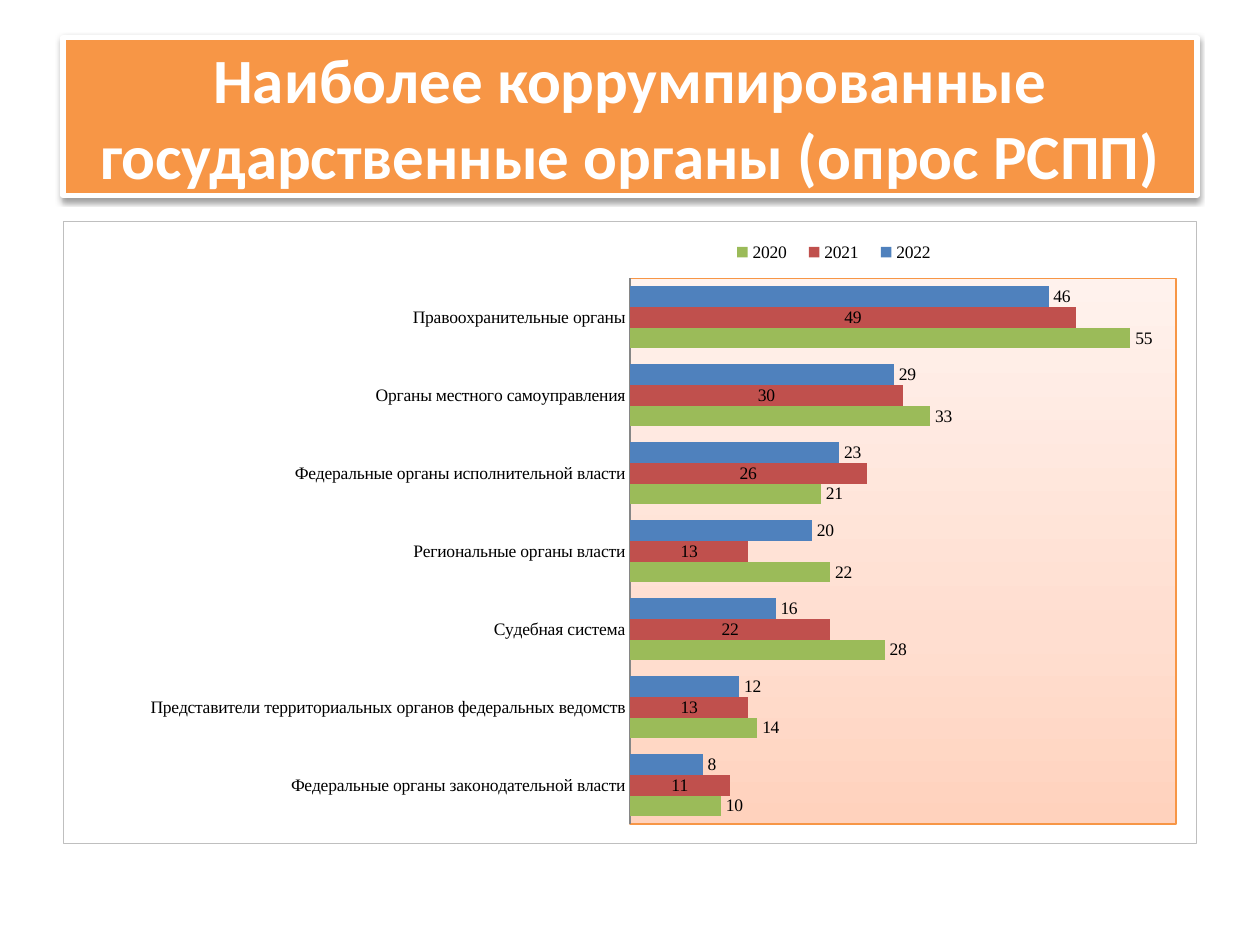
from pptx import Presentation
from pptx.chart.data import CategoryChartData
from pptx.dml.color import RGBColor
from pptx.enum import chart as ch, text
from pptx.oxml import parse_xml
from pptx.oxml.ns import nsdecls
from pptx.util import Inches, Pt

HUES = {"title": "F79646", "white": "FFFFFF", "ink": "000000",
        "frame": "BFBFBF", "axis": "868686", "low": "FFD2BD",
        "mid": "FFDED0", "high": "FFF2ED"}
BODIES = ["Правоохранительные органы", "Органы местного самоуправления",
          "Федеральные органы исполнительной власти",
          "Региональные органы власти", "Судебная система",
          "Представители территориальных органов федеральных ведомств",
          "Федеральные органы законодательной власти"]
OUT, MID = ch.XL_LABEL_POSITION.OUTSIDE_END, ch.XL_LABEL_POSITION.CENTER
YEARS = [("2022", [46, 29, 23, 20, 16, 12, 8], "4F81BD", OUT),
         ("2021", [49, 30, 26, 13, 22, 13, 11], "C0504D", MID),
         ("2020", [55, 33, 21, 22, 28, 14, 10], "9BBB59", OUT)]


def hue(name):
    """Return the named colour."""
    return RGBColor.from_string(HUES[name])


def node(tag, body):
    """Build an XML element in the chart and drawing namespaces."""
    return parse_xml(f"<{tag} {nsdecls('a', 'c')}>{body}</{tag}>")


def line(name, width):
    """Return the XML of a solid line."""
    return (f'<a:ln w="{Pt(width)}"><a:solidFill><a:srgbClr val="{HUES[name]}"/>'
            "</a:solidFill></a:ln>")


def layout(inner="", **sides):
    """Build a manual layout from fractions of the chart."""
    modes = '<c:xMode val="edge"/><c:yMode val="edge"/>'
    sizes = "".join(f'<c:{k} val="{v}"/>' for k, v in sides.items())
    return node("c:layout", f"<c:manualLayout>{inner}{modes}{sizes}</c:manualLayout>")


def add_title(slide, words):
    """Format the title as an orange panel with a white frame and shadow."""
    box = slide.shapes.title
    box.left, box.top = Inches(0.5), Inches(0.3)
    box.width, box.height = Inches(9), Inches(1.25)
    box.fill.solid()
    box.fill.fore_color.rgb = hue("title")
    box.line.color.rgb = hue("white")
    box.line.width = Pt(3)
    box._element.spPr.append(node("a:effectLst", (
        f'<a:outerShdw blurRad="{Pt(3.1)}" dist="{Pt(1.6)}" dir="5400000" '
        f'rotWithShape="0"><a:srgbClr val="{HUES["ink"]}">'
        '<a:alpha val="38000"/></a:srgbClr></a:outerShdw>')))
    frame = box.text_frame
    frame.text = words
    frame.word_wrap = True
    frame.auto_size = text.MSO_AUTO_SIZE.NONE
    frame.vertical_anchor = text.MSO_ANCHOR.MIDDLE
    para = frame.paragraphs[0]
    para.alignment = text.PP_ALIGN.CENTER
    para.font.name, para.font.size, para.font.bold = "Calibri", Pt(36), True
    para.font.color.rgb = hue("white")


def style_bars(plot):
    """Colour and label the bars of each year."""
    plot.gap_width, plot.overlap = 75, 0
    plot.vary_by_categories = False
    for bars, (_, _, shade, spot) in zip(plot.series, YEARS):
        bars.format.fill.solid()
        bars.format.fill.fore_color.rgb = RGBColor.from_string(shade)
        bars.invert_if_negative = False
        tags = bars.data_labels
        tags.show_value, tags.position = True, spot
        tags.number_format, tags.number_format_is_linked = "#,##0", False


def style_axes(chart):
    """Reverse the category axis and hide the value axis."""
    cat, val = chart.category_axis, chart.value_axis
    cat.reverse_order = True
    cat.major_tick_mark = ch.XL_TICK_MARK.NONE
    cat.format.line.color.rgb = hue("axis")
    val.minimum_scale, val.maximum_scale = 0, 60
    val.has_major_gridlines = val.visible = False


def style_areas(chart):
    """Place the plot and legend, and paint their backgrounds."""
    space = chart._chartSpace
    area = space.chart.plotArea
    for old in area.findall("{*}layout"):
        area.remove(old)
    area.insert(0, layout('<c:layoutTarget val="inner"/>',
                          x=0.5, y=0.092, w=0.482, h=0.877))
    stops = "".join(f'<a:gs pos="{spot * 1000}"><a:srgbClr val="{HUES[name]}"/></a:gs>'
                    for spot, name in ((0, "low"), (35, "mid"), (100, "high")))
    area.append(node("c:spPr", f'<a:gradFill><a:gsLst>{stops}</a:gsLst>'
                     '<a:lin ang="16200000" scaled="1"/></a:gradFill>'
                     + line("title", 1)))
    space.chart.addnext(node("c:spPr", line("frame", 0.75)))
    chart.has_legend = True
    chart.legend.position = ch.XL_LEGEND_POSITION.TOP
    chart.legend.include_in_layout = False
    key = chart.legend._element
    for old in key.findall("{*}layout"):
        key.remove(old)
    key.find("{*}legendPos").addnext(layout(x=0.58, y=0.02, w=0.2, h=0.06))


def add_bars(slide):
    """Add the bar chart of state bodies by year."""
    data = CategoryChartData()
    data.categories = BODIES
    for name, vals, _, _ in YEARS:
        data.add_series(name, vals)
    chart = slide.shapes.add_chart(
        ch.XL_CHART_TYPE.BAR_CLUSTERED, Inches(0.5), Inches(1.75),
        Inches(9), Inches(4.95), data).chart
    chart.has_title = False
    chart.font.name, chart.font.size = "Times New Roman", Pt(10)
    chart.font.color.rgb = hue("ink")
    style_bars(chart.plots[0])
    style_axes(chart)
    style_areas(chart)


def main():
    """Build and save the slide."""
    deck = Presentation()
    deck.slide_width, deck.slide_height = Inches(10), Inches(7.5)
    slide = deck.slides.add_slide(deck.slide_layouts[5])
    add_title(slide, "Наиболее коррумпированные государственные органы (опрос РСПП)")
    add_bars(slide)
    deck.save("out.pptx")


if __name__ == "__main__":
    main()
